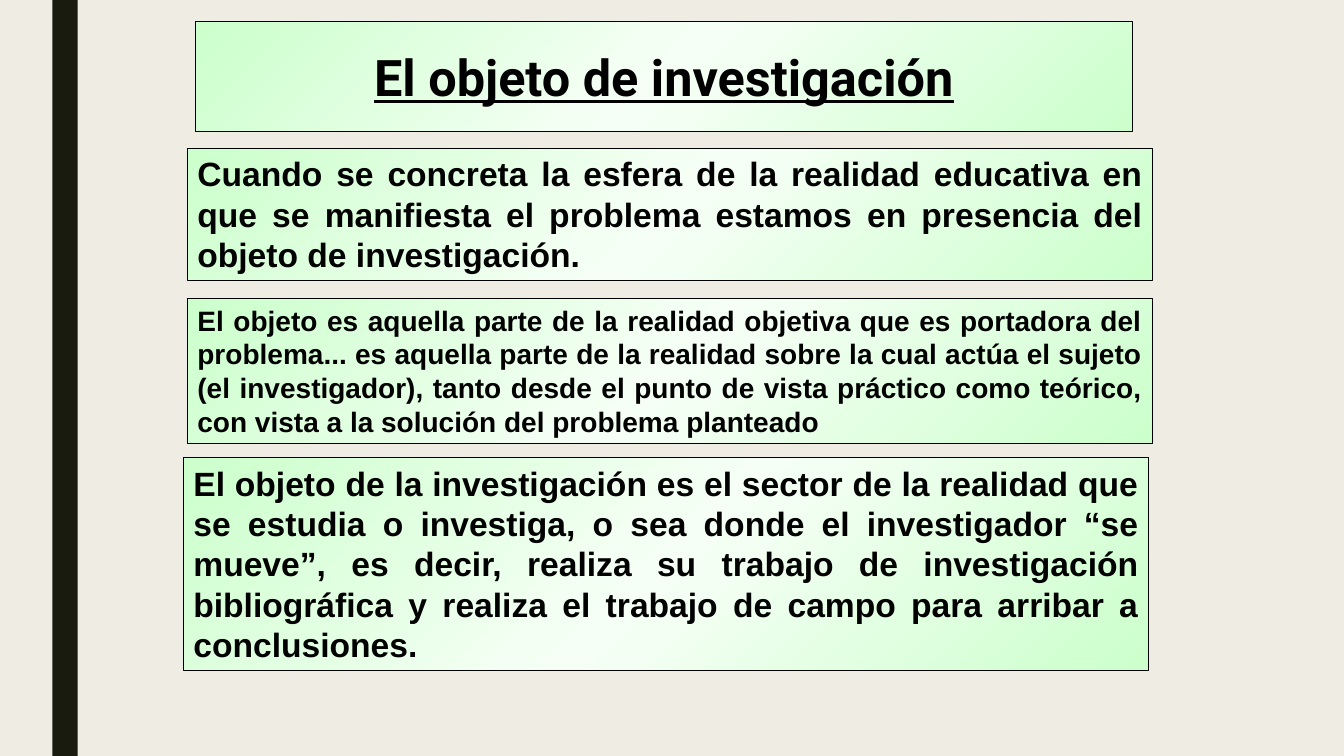
import copy
from dataclasses import dataclass

import pptx
import pptx.dml.color
import pptx.enum.shapes
import pptx.enum.text
import pptx.util
from pptx.util import Inches

ALIGN = pptx.enum.text.PP_ALIGN
ANCHOR = pptx.enum.text.MSO_ANCHOR


@dataclass(frozen=True)
class Theme:
    background: str = "EFEDE3"
    bar: str = "191B0E"
    ink: str = "000000"
    green: str = "CCFFCC"
    pale: str = "F6FFF6"
    title_font: str = "Roboto"
    body_font: str = "Arial"
    title_size: int = 36
    body_size: int = 24
    small_size: int = 20


@dataclass(frozen=True)
class Panel:
    text: str
    left: float
    top: float
    height: float
    size: int


THEME = Theme()
PANEL_WIDTH = 9.57
PANELS = [
    Panel("Cuando se concreta la esfera de la realidad educativa en que se manifiesta "
          "el problema estamos en presencia del objeto de investigación.",
          1.86, 1.47, 1.31, THEME.body_size),
    Panel("El objeto es aquella parte de la realidad objetiva que es portadora del "
          "problema... es aquella parte de la realidad sobre la cual actúa el sujeto "
          "(el investigador), tanto desde el punto de vista práctico como teórico, "
          "con vista a la solución del problema planteado",
          1.86, 2.96, 1.44, THEME.small_size),
    Panel("El objeto de la investigación es el sector de la realidad que se estudia o "
          "investiga, o sea donde el investigador “se mueve”, es decir, realiza su "
          "trabajo de investigación bibliográfica y realiza el trabajo de campo para "
          "arribar a conclusiones.",
          1.82, 4.54, 2.11, THEME.body_size),
]


def rgb(value: str) -> pptx.dml.color.RGBColor:
    return pptx.dml.color.RGBColor.from_string(value)


def add_rect(s, left: float, top: float, width: float, height: float):
    sp = s.shapes.add_shape(pptx.enum.shapes.MSO_SHAPE.RECTANGLE, Inches(left),
                            Inches(top), Inches(width), Inches(height))
    sp.shadow.inherit = False
    return sp


def add_green_box(s, left: float, top: float, width: float, height: float):
    """Outlined box with a diagonal green, pale, green gradient."""
    sp = add_rect(s, left, top, width, height)
    sp.line.color.rgb = rgb(THEME.ink)
    sp.line.width = pptx.util.Pt(0.75)
    sp.fill.gradient()
    sp.fill.gradient_angle = 315
    # The default gradient has two stops; add the middle one
    first = sp._element.spPr.gradFill.gsLst[0]
    first.addnext(copy.deepcopy(first))
    colors = (THEME.green, THEME.pale, THEME.green)
    for i, (stop, color) in enumerate(zip(sp.fill.gradient_stops, colors)):
        stop.position = i / 2
        stop.color.rgb = rgb(color)
    return sp


def set_text(sp, text: str, *, font: str, size: int, align, anchor=ANCHOR.TOP,
             wrap: bool = True, grow: bool = False, underline: bool = False) -> None:
    tf = sp.text_frame
    tf.word_wrap = wrap
    tf.vertical_anchor = anchor
    if grow:
        tf.auto_size = pptx.enum.text.MSO_AUTO_SIZE.SHAPE_TO_FIT_TEXT
    p = tf.paragraphs[0]
    p.alignment = align
    r = p.add_run()
    r.text = text
    r.font.name = font
    r.font.size = pptx.util.Pt(size)
    r.font.bold = True
    if underline:
        r.font.underline = True
    r.font.color.rgb = rgb(THEME.ink)


def main() -> None:
    prs = pptx.Presentation()
    prs.slide_width, prs.slide_height = Inches(13.33), Inches(7.5)
    s = prs.slides.add_slide(prs.slide_layouts[6])
    s.background.fill.solid()
    s.background.fill.fore_color.rgb = rgb(THEME.background)

    # Dark side bar
    bar = add_rect(s, 0.52, 0, 0.25, 7.5)
    bar.fill.solid()
    bar.fill.fore_color.rgb = rgb(THEME.bar)
    bar.line.fill.background()

    # Title
    set_text(add_green_box(s, 1.94, 0.21, 9.29, 1.1), "El objeto de investigación",
             font=THEME.title_font, size=THEME.title_size, align=ALIGN.CENTER,
             anchor=ANCHOR.MIDDLE, wrap=False, underline=True)

    # Definitions
    for panel in PANELS:
        sp = add_green_box(s, panel.left, panel.top, PANEL_WIDTH, panel.height)
        set_text(sp, panel.text, font=THEME.body_font, size=panel.size,
                 align=ALIGN.JUSTIFY, grow=True)

    prs.save("out.pptx")


if __name__ == "__main__":
    main()
